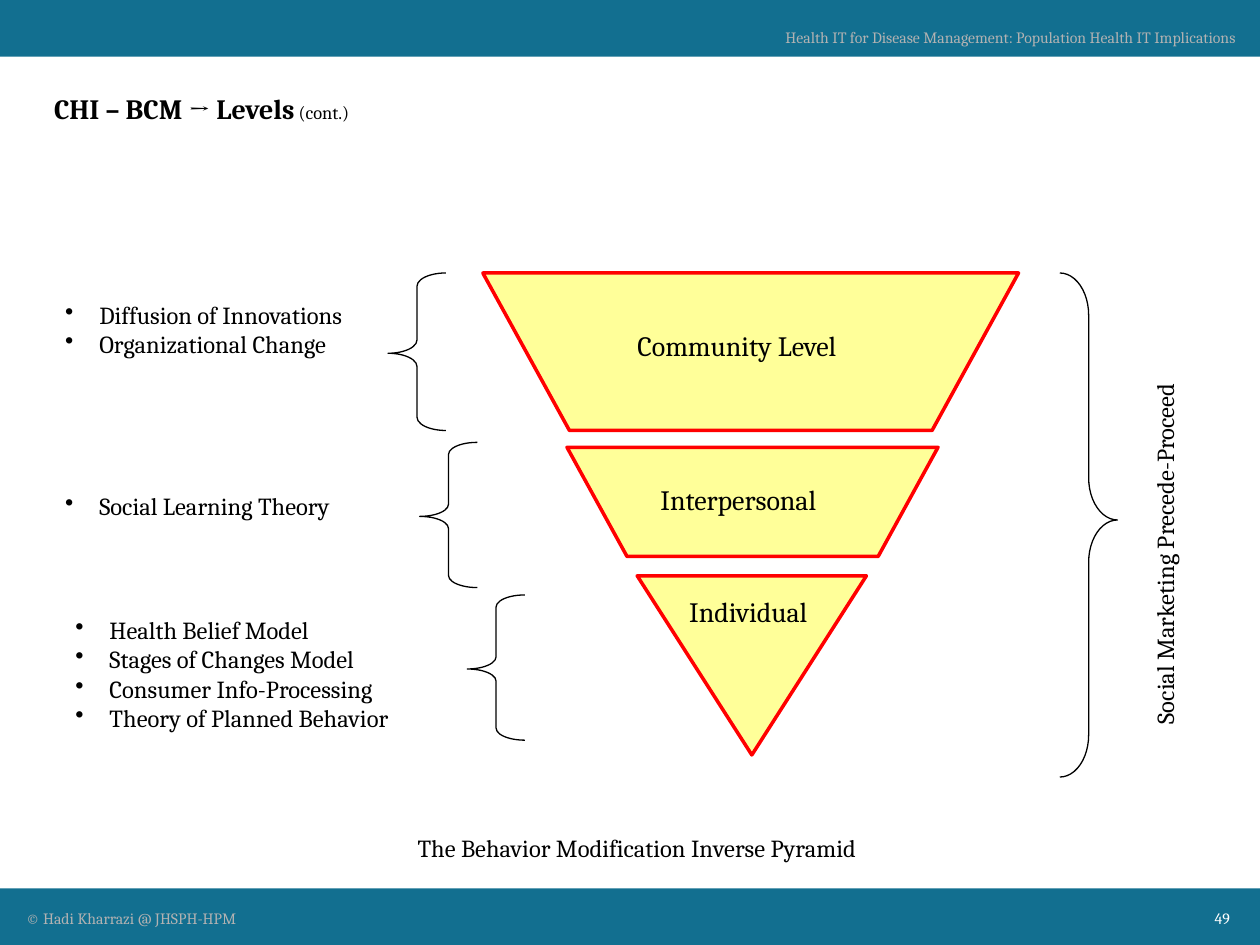
from dataclasses import dataclass

from lxml.etree import SubElement
from pptx import Presentation
from pptx.dml.color import RGBColor
from pptx.enum.shapes import MSO_SHAPE
from pptx.enum.text import MSO_ANCHOR, PP_ALIGN
from pptx.oxml.ns import qn
from pptx.util import Pt


@dataclass(frozen=True)
class Theme:
    font: str = "Cambria"
    bar: RGBColor = RGBColor(0x12, 0x6F, 0x90)
    muted: RGBColor = RGBColor(0xB2, 0xB2, 0xB2)
    white: RGBColor = RGBColor(0xFF, 0xFF, 0xFF)
    ink: RGBColor = RGBColor(0, 0, 0)
    level_fill: RGBColor = RGBColor(0xFF, 0xFF, 0x99)
    level_edge: RGBColor = RGBColor(0xFF, 0, 0)
    large: float = 16
    body: float = 14
    note: float = 10.5
    small: float = 9


THEME = Theme()
WIDTH, HEIGHT, BAR_HEIGHT = 720, 540, 32.4
BULLET_INDENT = 19.5
LEFT, CENTER, RIGHT = PP_ALIGN.LEFT, PP_ALIGN.CENTER, PP_ALIGN.RIGHT

# Boxes are left, top, width, height
TITLE = [("CHI – BCM → Levels", THEME.large, True), (" (cont.)", THEME.note, False)]
TITLE_BOX = (23.8, 47.5, 671.8, 28.8)

FURNITURE = [
    ("© Hadi Kharrazi @ JHSPH-HPM", (7.9, 515.5, 447, 18), LEFT, THEME.muted),
    ("Health IT for Disease Management: Population Health IT Implications",
     (413.3, 12.2, 299.5, 18), RIGHT, THEME.muted),
    ("49", (663.1, 515.5, 46.8, 18), RIGHT, THEME.white),
]
CAPTION = ("The Behavior Modification Inverse Pyramid", (220.3, 472.3, 287.3, 24.5))

# Corners run top left, bottom left, bottom right, top right
TRAPEZOIDS = [
    [(275.9, 156), (325.4, 246), (532.6, 246), (582, 156)],
    [(324, 255.6), (358.3, 318), (501.8, 318), (536, 255.6)],
]
TRIANGLE_BOX = (364.1, 329, 131, 102.4)
LEVEL_LABELS = [
    ("Community Level", (350.6, 184.3, 141.1, 26.6)),
    ("Interpersonal", (365.8, 272.2, 112.3, 26.6)),
    ("Individual", (383, 336.2, 89.3, 26.6)),
]

# Theories, their box, brace box, brace curl
THEORIES = [
    (["Diffusion of Innovations", "Organizational Change"],
     (30.2, 167.8, 175.7, 41), (221.8, 156, 33, 90), 0.23),
    (["Social Learning Theory"],
     (30.2, 277.2, 167.8, 24.5), (239.8, 252.8, 33, 83), 0.21),
    (["Health Belief Model", "Stages of Changes Model",
      "Consumer Info-Processing", "Theory of Planned Behavior"],
     (36, 347.8, 197.3, 74.9), (267, 340, 33, 83), 0.21),
]
OVERALL = ("Social Marketing Precede-Proceed", (551.5, 294.5, 228.2, 24.5))
OVERALL_BRACE = (605.6, 156, 33, 288)


def points(box):
    return [Pt(value) for value in box]


def paint(shape, fill=None, edge=None, weight=0):
    shape.shadow.inherit = False
    if fill is None:
        shape.fill.background()
    else:
        shape.fill.solid()
        shape.fill.fore_color.rgb = fill
    if edge is None:
        shape.line.fill.background()
    else:
        shape.line.color.rgb = edge
        shape.line.width = Pt(weight)


def add_preset(slide, preset, box, rotation=0, **paint_options):
    shape = slide.shapes.add_shape(preset, *points(box))
    shape.rotation = rotation
    paint(shape, **paint_options)
    return shape


def add_brace(slide, box, curl, rotation=0):
    brace = add_preset(slide, MSO_SHAPE.LEFT_BRACE, box, rotation,
                       edge=THEME.ink, weight=0.75)
    brace.adjustments[0] = curl
    brace.adjustments[1] = 0.51


def add_level(slide, corners):
    start, *others = [points(corner) for corner in corners]
    builder = slide.shapes.build_freeform(*start, scale=1.0)
    builder.add_line_segments(others, close=True)
    paint(builder.convert_to_shape(), THEME.level_fill, THEME.level_edge, 2)


def set_bullet(paragraph):
    properties = paragraph._p.get_or_add_pPr()
    properties.set("marL", str(Pt(BULLET_INDENT)))
    properties.set("indent", str(-Pt(BULLET_INDENT)))
    SubElement(properties, qn("a:buChar")).set("char", "•")


def add_text(slide, box, paragraphs, align=LEFT, color=THEME.ink,
             bulleted=False, anchor=MSO_ANCHOR.TOP):
    """Each paragraph is a list of (text, size, bold) runs."""
    textbox = slide.shapes.add_textbox(*points(box))
    frame = textbox.text_frame
    frame.word_wrap = True
    frame.vertical_anchor = anchor
    for index, runs in enumerate(paragraphs):
        paragraph = frame.add_paragraph() if index else frame.paragraphs[0]
        paragraph.alignment = align
        if bulleted:
            set_bullet(paragraph)
        for text, size, bold in runs:
            run = paragraph.add_run()
            run.text = text
            run.font.name = THEME.font
            run.font.size = Pt(size)
            run.font.bold = bold
            run.font.color.rgb = color
    return textbox


def main():
    deck = Presentation()
    deck.slide_width, deck.slide_height = Pt(WIDTH), Pt(HEIGHT)
    slide = deck.slides.add_slide(deck.slide_layouts[6])

    for top in (0, HEIGHT - BAR_HEIGHT):
        add_preset(slide, MSO_SHAPE.RECTANGLE, (0, top, WIDTH, BAR_HEIGHT),
                   fill=THEME.bar)
    for text, box, align, color in FURNITURE:
        add_text(slide, box, [[(text, THEME.small, False)]], align, color)
    add_text(slide, TITLE_BOX, [TITLE], anchor=MSO_ANCHOR.MIDDLE)

    caption, caption_box = CAPTION
    add_text(slide, caption_box, [[(caption, THEME.body, False)]], CENTER)

    for corners in TRAPEZOIDS:
        add_level(slide, corners)
    add_preset(slide, MSO_SHAPE.ISOSCELES_TRIANGLE, TRIANGLE_BOX, 180,
               fill=THEME.level_fill, edge=THEME.level_edge, weight=2)
    for label, box in LEVEL_LABELS:
        add_text(slide, box, [[(label, THEME.large, False)]], CENTER)

    for theories, box, brace_box, curl in THEORIES:
        add_brace(slide, brace_box, curl)
        add_text(slide, box, [[(theory, THEME.body, False)] for theory in theories],
                 bulleted=True)

    add_brace(slide, OVERALL_BRACE, 0.73, rotation=180)
    overall, overall_box = OVERALL
    add_text(slide, overall_box, [[(overall, THEME.body, False)]]).rotation = 270

    deck.save("out.pptx")


if __name__ == "__main__":
    main()
